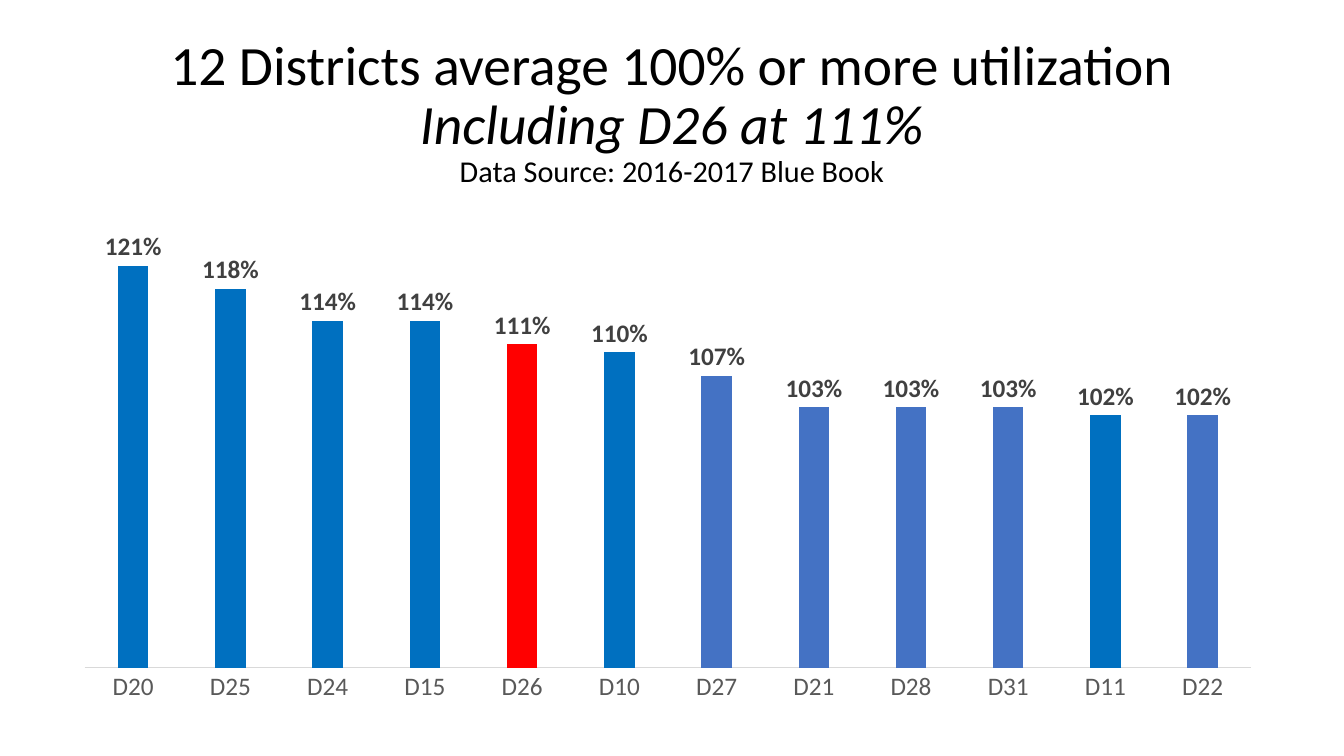
from dataclasses import dataclass
from lxml.etree import SubElement
from pptx import Presentation
from pptx.chart.data import CategoryChartData
from pptx.dml.color import RGBColor
from pptx.enum.chart import XL_CHART_TYPE, XL_LABEL_POSITION, XL_TICK_MARK
from pptx.enum.text import MSO_ANCHOR, MSO_AUTO_SIZE, PP_ALIGN
from pptx.oxml.ns import qn
from pptx.util import Pt


@dataclass(frozen=True)
class Theme:
    font: str = "Calibri"
    ink: str = "000000"
    label: str = "404040"
    axis: str = "595959"
    rule: str = "D9D9D9"
    bar: str = "4472C4"
    blue: str = "0070C0"
    red: str = "FF0000"
    head: float = 39.6
    note: float = 21.6
    body: float = 18


THEME = Theme()

# Text, size, italic
TITLE = [
    ("12 Districts average 100% or more utilization", THEME.head, False),
    ("Including D26 at 111%", THEME.head, True),
    ("Data Source: 2016-2017 Blue Book", THEME.note, False),
]
# District, utilization, bar colour
RATES = [
    ("D20", 1.21, THEME.blue),
    ("D25", 1.18, THEME.blue),
    ("D24", 1.14, THEME.blue),
    ("D15", 1.14, THEME.blue),
    ("D26", 1.11, THEME.red),
    ("D10", 1.10, THEME.blue),
    ("D27", 1.07, THEME.bar),
    ("D21", 1.03, THEME.bar),
    ("D28", 1.03, THEME.bar),
    ("D31", 1.03, THEME.bar),
    ("D11", 1.02, THEME.blue),
    ("D22", 1.02, THEME.bar),
]
# Left, top, width, height in points
PAGE = (960, 540)
TITLE_BOX = (66, 28.75, 828, 104.4)
CHART_BOX = (38.2, 139, 856, 372.2)
# Shares of the chart frame
PLOT = {"x": 0.026, "y": 0, "w": 0.974, "h": 0.908}


def style(font, size, color, bold=False, italic=False):
    font.name = THEME.font
    font.size = Pt(size)
    font.bold = bold
    font.italic = italic
    font.color.rgb = RGBColor.from_string(color)


def paint(fill, color):
    fill.solid()
    fill.fore_color.rgb = RGBColor.from_string(color)


def add_title(slide):
    frame = slide.shapes.add_textbox(*map(Pt, TITLE_BOX)).text_frame
    frame.word_wrap = True
    frame.auto_size = MSO_AUTO_SIZE.NONE
    frame.vertical_anchor = MSO_ANCHOR.MIDDLE
    para = frame.paragraphs[0]
    para.alignment = PP_ALIGN.CENTER
    para.line_spacing = 0.9
    for row, (text, size, italic) in enumerate(TITLE):
        if row:
            para.add_line_break()
        run = para.add_run()
        run.text = text
        style(run.font, size, THEME.ink, italic=italic)


def place_plot(chart):
    """Fix the inner plot area inside the chart frame."""
    area = chart.plots[0]._element.getparent()
    layout = area.find(qn("c:layout"))
    if layout is None:
        layout = SubElement(area, qn("c:layout"))
        area.insert(0, layout)
    manual = SubElement(layout, qn("c:manualLayout"))
    parts = [("layoutTarget", "inner"), ("xMode", "edge"), ("yMode", "edge")]
    for tag, value in parts + list(PLOT.items()):
        SubElement(manual, qn(f"c:{tag}")).set("val", str(value))


def add_bars(slide):
    data = CategoryChartData(number_format="0%")
    data.categories = [name for name, _, _ in RATES]
    data.add_series("Series 1", [rate for _, rate, _ in RATES])
    chart = slide.shapes.add_chart(
        XL_CHART_TYPE.COLUMN_CLUSTERED, *map(Pt, CHART_BOX), data
    ).chart
    chart.has_legend = False
    chart.has_title = False
    style(chart.font, 10, THEME.ink)
    place_plot(chart)

    rates = chart.value_axis
    rates.minimum_scale, rates.maximum_scale = 0.7, 1.3
    rates.has_major_gridlines = False
    rates.visible = False

    names = chart.category_axis
    names.major_tick_mark = XL_TICK_MARK.NONE
    names.minor_tick_mark = XL_TICK_MARK.NONE
    style(names.tick_labels.font, THEME.body, THEME.axis)
    names.format.line.width = Pt(0.75)
    paint(names.format.line.fill, THEME.rule)

    plot = chart.plots[0]
    plot.vary_by_categories = False
    plot.gap_width, plot.overlap = 219, -27
    bars = plot.series[0]
    bars.invert_if_negative = False
    paint(bars.format.fill, THEME.bar)
    for spot, (_, _, color) in enumerate(RATES):
        if color != THEME.bar:
            paint(bars.points[spot].format.fill, color)

    labels = bars.data_labels
    labels.show_value = True
    labels.position = XL_LABEL_POSITION.OUTSIDE_END
    labels.number_format = "0%"
    labels.number_format_is_linked = False
    style(labels.font, THEME.body, THEME.label, bold=True)


def main():
    deck = Presentation()
    deck.slide_width, deck.slide_height = map(Pt, PAGE)
    slide = deck.slides.add_slide(deck.slide_layouts[6])
    add_title(slide)
    add_bars(slide)
    deck.save("out.pptx")


if __name__ == "__main__":
    main()
